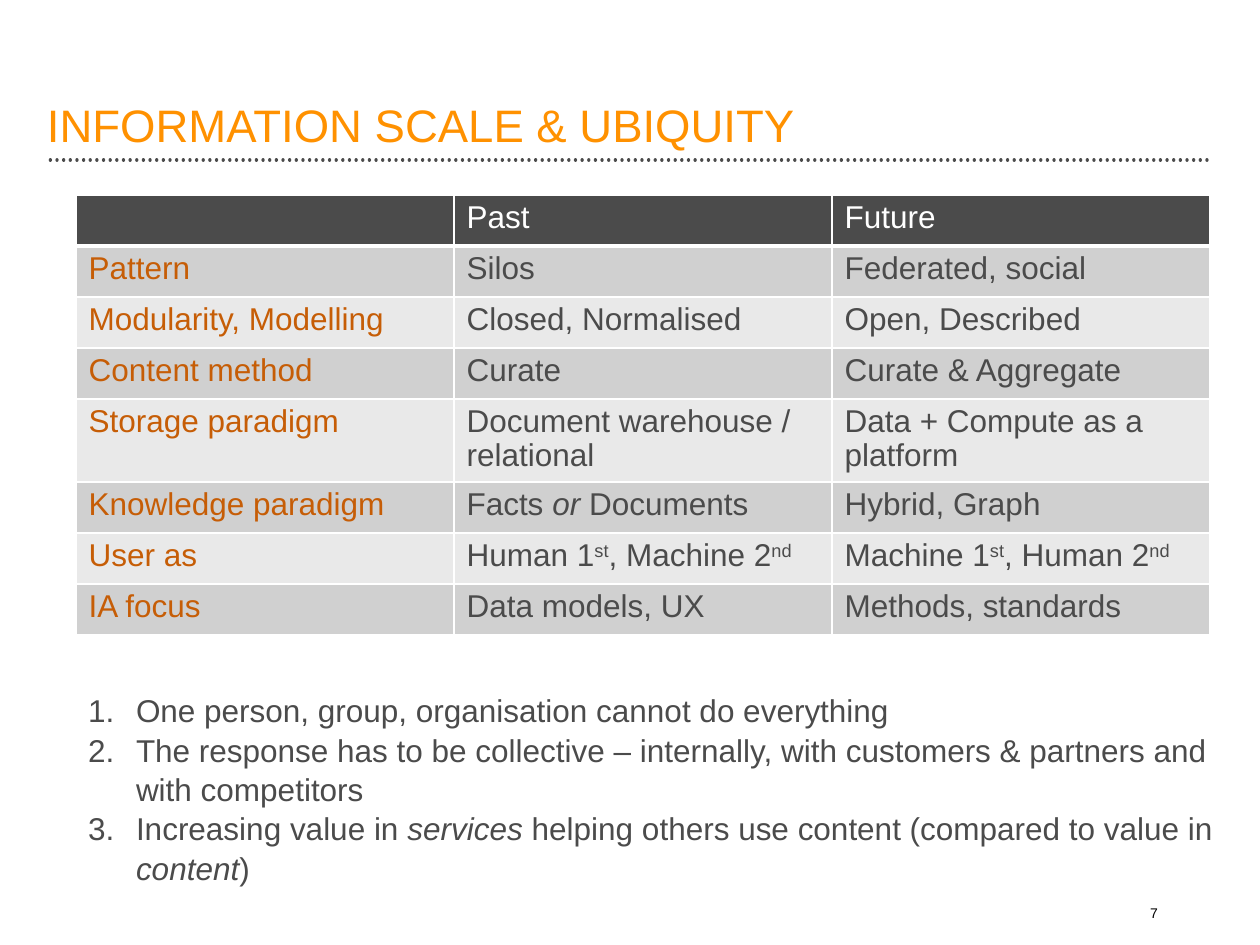
import pptx
import pptx.util
import pptx.dml.color
import pptx.enum.dml
import pptx.enum.shapes
import pptx.enum.text
import pptx.oxml.ns
import lxml.etree

RGBColor = pptx.dml.color.RGBColor
ORANGE = RGBColor(0xFF, 0x91, 0x00)
RUST = RGBColor(0xC6, 0x5D, 0x06)
GREY = RGBColor(0x4B, 0x4B, 0x4B)
MID = RGBColor(0xD0, 0xD0, 0xD0)
PALE = RGBColor(0xE9, 0xE9, 0xE9)
WHITE = RGBColor(0xFF, 0xFF, 0xFF)
BLACK = RGBColor(0, 0, 0)

ROWS = [
    ("", "Past", "Future"),
    ("Pattern", "Silos", "Federated, social"),
    ("Modularity, Modelling", "Closed, Normalised", "Open, Described"),
    ("Content method", "Curate", "Curate & Aggregate"),
    ("Storage paradigm", "Document warehouse / relational", "Data + Compute as a platform"),
    ("Knowledge paradigm", "Facts |_or |Documents", "Hybrid, Graph"),
    ("User as", "Human 1|^st|, Machine 2|^nd", "Machine 1|^st|, Human 2|^nd"),
    ("IA focus", "Data models, UX", "Methods, standards"),
]
POINTS = [
    "One person, group, organisation cannot do everything",
    "The response has to be collective – internally, with customers & partners and with competitors",
    "Increasing value in |_services| helping others use content (compared to value in |_content|)",
]


def px(num):
    return pptx.util.Emu(round(num * 914400 / 126))


def add(root, tag, **attrs):
    node = lxml.etree.SubElement(root, pptx.oxml.ns.qn(tag))
    for key, val in attrs.items():
        node.set(key, str(val))
    return node


def write(para, text, size=18, color=GREY, space=None):
    para.alignment = pptx.enum.text.PP_ALIGN.LEFT
    if space:
        para.line_spacing = space
    para.font.size = pptx.util.Pt(size)
    for part in text.split("|") if text else []:
        run = para.add_run()
        run.text = part.lstrip("_^")
        run.font.name = "Arial"
        run.font.size = pptx.util.Pt(size)
        run.font.color.rgb = color
        if part.startswith("_"):
            run.font.italic = True
        if part.startswith("^"):
            run._r.get_or_add_rPr().set("baseline", "30000")


def inset(frame, left, top, right, bottom):
    frame.margin_left, frame.margin_top = px(left), px(top)
    frame.margin_right, frame.margin_bottom = px(right), px(bottom)
    frame.word_wrap = True


def head(slide, left, top, width, height):
    title = slide.shapes.title
    title.left, title.top, title.width, title.height = map(px, (left, top, width, height))
    frame = title.text_frame
    inset(frame, 0, 6, 0, 6)
    frame.auto_size = pptx.enum.text.MSO_AUTO_SIZE.NONE
    frame.vertical_anchor = pptx.enum.text.MSO_ANCHOR.BOTTOM
    write(frame.paragraphs[0], "INFORMATION SCALE & UBIQUITY", size=26, color=ORANGE)
    base = px(top + height + 2)
    rule = slide.shapes.add_connector(
        pptx.enum.shapes.MSO_CONNECTOR.STRAIGHT, px(left + 1160), base, px(left), base)
    rule.line.color.rgb = GREY
    rule.line.width = pptx.util.Pt(1.9)
    rule.line.dash_style = pptx.enum.dml.MSO_LINE.ROUND_DOT
    rule.line._get_or_add_ln().set("cap", "rnd")
    add(rule._element.spPr, "a:effectLst")


def edge(cell, low):
    props = cell._tc.get_or_add_tcPr()
    for spot, (side, wide) in enumerate((("L", 1), ("R", 1), ("T", 1), ("B", low))):
        line = add(props, "a:ln" + side, w=pptx.util.Pt(wide))
        add(add(line, "a:solidFill"), "a:srgbClr", val=WHITE)
        props.insert(spot, line)


def grid(slide, left, top, width, row, tall):
    high = [tall if "/" in cells[1] else row for cells in ROWS]
    table = slide.shapes.add_table(
        len(ROWS), 3, px(left), px(top), px(width), px(sum(high))).table
    for col in table.columns:
        col.width = px(width / 3)
    for i, cells in enumerate(ROWS):
        table.rows[i].height = px(high[i])
        for j, text in enumerate(cells):
            cell = table.cell(i, j)
            cell.fill.solid()
            cell.fill.fore_color.rgb = GREY if i == 0 else MID if i % 2 else PALE
            color = WHITE if i == 0 else RUST if j == 0 else GREY
            write(cell.text_frame.paragraphs[0], text, color=color, space=0.97)
            edge(cell, 1 if i else 3)


def notes(slide, left, top, width, height):
    box = slide.shapes.add_textbox(*map(px, (left, top, width, height)))
    frame = box.text_frame
    inset(frame, 12, 6, 12, 6)
    for i, text in enumerate(POINTS):
        para = frame.add_paragraph() if i else frame.paragraphs[0]
        props = para._p.get_or_add_pPr()
        props.set("marL", str(px(48)))
        props.set("indent", str(-px(48)))
        add(props, "a:buFont", typeface="+mj-lt")
        add(props, "a:buAutoNum", type="arabicPeriod")
        write(para, text, space=1.04)


def folio(slide, left, top, width, height):
    box = slide.shapes.add_textbox(*map(px, (left, top, width, height)))
    frame = box.text_frame
    inset(frame, 12, 12, 0, 12)
    frame.vertical_anchor = pptx.enum.text.MSO_ANCHOR.MIDDLE
    write(frame.paragraphs[0], "7", size=8, color=BLACK)


def main():
    deck = pptx.Presentation()
    deck.slide_width, deck.slide_height = px(1260), px(945)
    slide = deck.slides.add_slide(deck.slide_layouts[5])
    head(slide, 47, 23, 1167, 135)
    grid(slide, 76, 195, 1134, 51, 83)
    notes(slide, 76, 684, 1168, 242)
    folio(slide, 1138, 895, 67, 35)
    deck.save("out.pptx")


if __name__ == "__main__":
    main()
